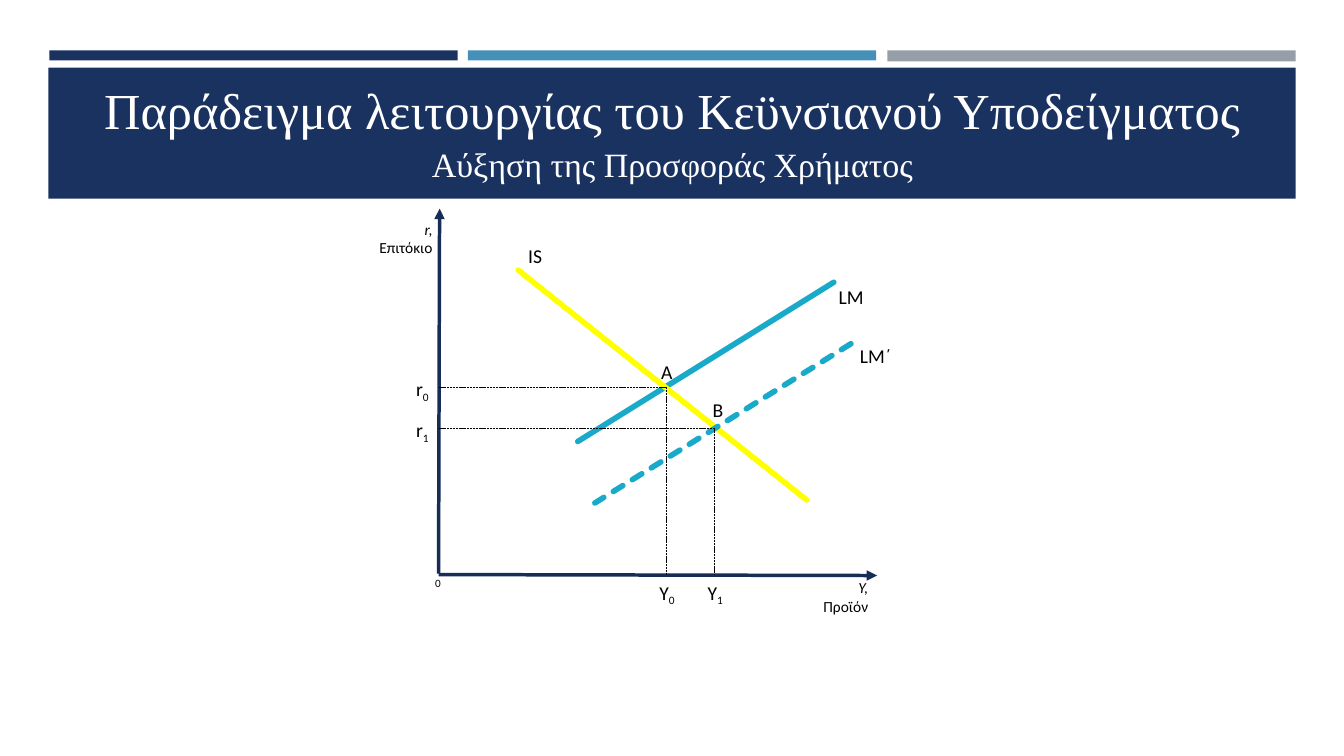
from pptx import Presentation
from pptx.dml.color import RGBColor
from pptx.enum.dml import MSO_LINE
from pptx.enum.shapes import MSO_CONNECTOR, MSO_SHAPE
from pptx.enum.text import MSO_ANCHOR, MSO_AUTO_SIZE, PP_ALIGN
from pptx.oxml.ns import qn
from pptx.util import Inches, Pt
from lxml.etree import SubElement

NAVY = RGBColor(0x1A, 0x32, 0x60)
BLUE = RGBColor(0x45, 0x90, 0xB8)
GRAY = RGBColor(0x96, 0x9F, 0xA7)
AXIS = RGBColor(0x17, 0x2D, 0x56)
TEAL = RGBColor(0x19, 0xAA, 0xC9)
YELLOW = RGBColor(0xFF, 0xFF, 0x00)
BLACK = RGBColor(0, 0, 0)
WHITE = RGBColor(0xFF, 0xFF, 0xFF)
LEFT, CENTER, RIGHT = PP_ALIGN.LEFT, PP_ALIGN.CENTER, PP_ALIGN.RIGHT

deck = Presentation()
deck.slide_width, deck.slide_height = Inches(13.33), Inches(7.5)
slide = deck.slides.add_slide(deck.slide_layouts[5])
shapes = slide.shapes


def draw_line(start, end, color, width, dash=None):
    line = shapes.add_connector(
        MSO_CONNECTOR.STRAIGHT, *[Inches(v) for v in (*start, *end)])
    line.line.color.rgb = color
    line.line.width = Pt(width)
    if dash:
        line.line.dash_style = dash
    SubElement(line.element.spPr, qn("a:effectLst"))
    return line


def add_label(text, left, top, width, height=0.34, align=LEFT, size=14):
    """Add a label that keeps an inset only on the side it is aligned to."""
    box = shapes.add_textbox(
        Inches(left), Inches(top), Inches(width), Inches(height))
    frame = box.text_frame
    frame.word_wrap = True
    frame.margin_left = Inches(0.1 if align == LEFT else 0)
    frame.margin_right = Inches(0.1 if align == RIGHT else 0)
    frame.text = text
    for para in frame.paragraphs:
        para.alignment = align
        para.font.name = "Calibri"
        para.font.size = Pt(size)
        para.font.color.rgb = BLACK
    return frame


# Header
bars = [
    (0.49, 0.5, 4.05, 0.1, NAVY),
    (4.64, 0.5, 4.05, 0.1, BLUE),
    (8.8, 0.5, 4.05, 0.11, GRAY),
    (0.48, 0.67, 12.37, 1.3, NAVY),
]
for *place, color in bars:
    bar = shapes.add_shape(MSO_SHAPE.RECTANGLE, *[Inches(v) for v in place])
    bar.shadow.inherit = False
    bar.fill.solid()
    bar.fill.fore_color.rgb = color
    bar.line.fill.background()

title = shapes.title
title.left, title.top = Inches(0.64), Inches(0.77)
title.width, title.height = Inches(12.06), Inches(1.11)
shapes.element.append(title.element)  # bring in front of the band
frame = title.text_frame
frame.text = ("Παράδειγμα λειτουργίας του Κεϋνσιανού Υποδείγματος\v"
              "Αύξηση της Προσφοράς Χρήματος")
frame.auto_size = MSO_AUTO_SIZE.NONE
frame.word_wrap = True
frame.vertical_anchor = MSO_ANCHOR.BOTTOM
para = frame.paragraphs[0]
para.alignment = CENTER
para.line_spacing = 1.1
for run, size in zip(para.runs, (36, 24.3)):
    run.font.name = "Times New Roman"
    run.font.size = Pt(size)
    run.font.color.rgb = WHITE

# Axes, with the arrowhead at the start of each line
for tip, end in [((4.36, 2.07), (4.35, 5.69)), ((8.7, 5.71), (4.35, 5.7))]:
    axis = draw_line(tip, end, AXIS, 2.5)
    SubElement(axis.get_or_add_ln(), qn("a:headEnd"), type="triangle")

# Curves
curves = [
    ((8.27, 2.8), (5.73, 4.38), TEAL, None),
    ((5.14, 2.68), (8, 4.96), YELLOW, None),
    ((8.44, 3.41), (5.9, 4.99), TEAL, MSO_LINE.SQUARE_DOT),
]
for start, end, color, dash in curves:
    curve = draw_line(start, end, color, 4, dash)
    curve.get_or_add_ln().set("cap", "rnd")

# Guides from each equilibrium to both axes, with their values
for num, (x, y) in enumerate([(6.61, 3.84), (7.09, 4.25)]):
    for start, end in [((4.35, y), (x, y)), ((x, y), (x, 5.7))]:
        draw_line(start, end, BLACK, 0.5, MSO_LINE.SQUARE_DOT)
    rate = add_label("r", 4.01, y - 0.15, 0.34, align=RIGHT)
    output = add_label("Y", x - 0.18, 5.71, 0.37, align=CENTER)
    for frame in (rate, output):
        sub = frame.paragraphs[0].add_run()
        sub.text = str(num)
        sub.font.element.set("baseline", "-25000") if hasattr(
            sub.font, "element") else sub._r.get_or_add_rPr().set(
            "baseline", "-25000")

# Names of curves and points
names = [
    ("IS", 5.14, 2.37, 0.56),
    ("LM", 8.22, 2.78, 0.57),
    ("LM΄", 8.43, 3.36, 0.57),
    ("A", 6.46, 3.52, 0.3),
    ("Β", 6.97, 3.9, 0.3),
]
for name in names:
    add_label(*name)

# Names of axes
add_label("0", 4.14, 5.67, 0.33, 0.24, RIGHT, 8)
for text, left, top, width in [("r,\nΕπιτόκιο", 3.59, 2.13, 0.8),
                               ("Y,\nΠροϊόν", 8, 5.69, 0.71)]:
    frame = add_label(text, left, top, width, 0.47, RIGHT, 11)
    frame.paragraphs[0].runs[0].font.italic = True

deck.save("out.pptx")
